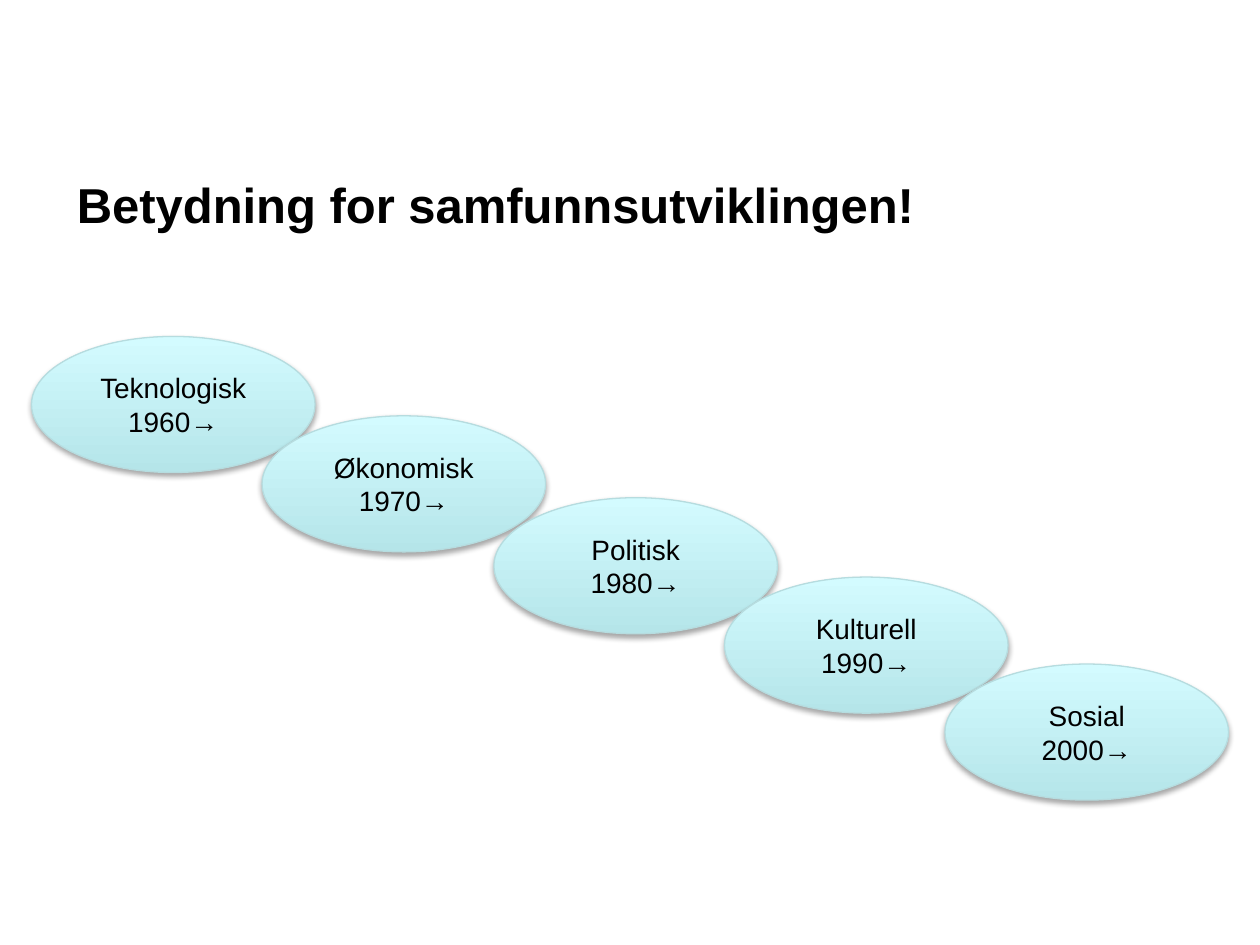
from lxml import etree
from pptx import Presentation
from pptx.dml.color import RGBColor
from pptx.enum import shapes, text
from pptx.oxml import ns
from pptx.util import Inches, Pt

BLACK = RGBColor(0x00, 0x00, 0x00)
AQUA_DARK = RGBColor(0xB5, 0xE5, 0xE9)
AQUA_LIGHT = RGBColor(0xD3, 0xFB, 0xFF)
AQUA_EDGE = RGBColor(0xB6, 0xDC, 0xDF)


def add_soft_shadow(shape):
    shape.shadow.inherit = False
    effects = shape._element.spPr.find(ns.qn("a:effectLst"))
    shadow = etree.SubElement(effects, ns.qn("a:outerShdw"), blurRad="40000",
                              dist="23000", dir="5400000", rotWithShape="0")
    color = etree.SubElement(shadow, ns.qn("a:srgbClr"), val="000000")
    etree.SubElement(color, ns.qn("a:alpha"), val="35000")


deck = Presentation()
deck.slide_width, deck.slide_height = Inches(10), Inches(7.5)
page = deck.slides.add_slide(deck.slide_layouts[5])

# Title
title = page.shapes.title
title.left, title.top = Inches(0.51), Inches(0.99)
title.width, title.height = Inches(9.49), Inches(1.25)
title.text_frame.text = "Betydning for samfunnsutviklingen!"
title.text_frame.vertical_anchor = text.MSO_ANCHOR.MIDDLE
para = title.text_frame.paragraphs[0]
para.alignment = text.PP_ALIGN.LEFT
para.font.name, para.font.size, para.font.bold = "Arial", Pt(28), True
para.font.color.rgb = BLACK

# Descending chain of ellipses, one per decade
stages = [
    ("Teknologisk", 0.25, 2.67),
    ("Økonomisk", 2.08, 3.3),
    ("Politisk", 3.92, 3.95),
    ("Kulturell", 5.75, 4.58),
    ("Sosial", 7.5, 5.27),
]
for index, (name, left, top) in enumerate(stages):
    ellipse = page.shapes.add_shape(shapes.MSO_SHAPE.OVAL, Inches(left), Inches(top),
                                    Inches(2.25), Inches(1.08))
    ellipse.fill.gradient()
    ellipse.fill.gradient_angle = 90
    for stop, color in zip(ellipse.fill.gradient_stops, (AQUA_DARK, AQUA_LIGHT)):
        stop.color.rgb = color
    ellipse.line.color.rgb = AQUA_EDGE
    ellipse.line.width = Pt(0.75)
    add_soft_shadow(ellipse)

    frame = ellipse.text_frame
    frame.text = f"{name}\n{1960 + 10 * index}→"
    frame.vertical_anchor = text.MSO_ANCHOR.MIDDLE
    for para in frame.paragraphs:
        para.alignment = text.PP_ALIGN.CENTER
        para.font.name, para.font.size = "Arial", Pt(16)
        para.font.color.rgb = BLACK

deck.save("out.pptx")
